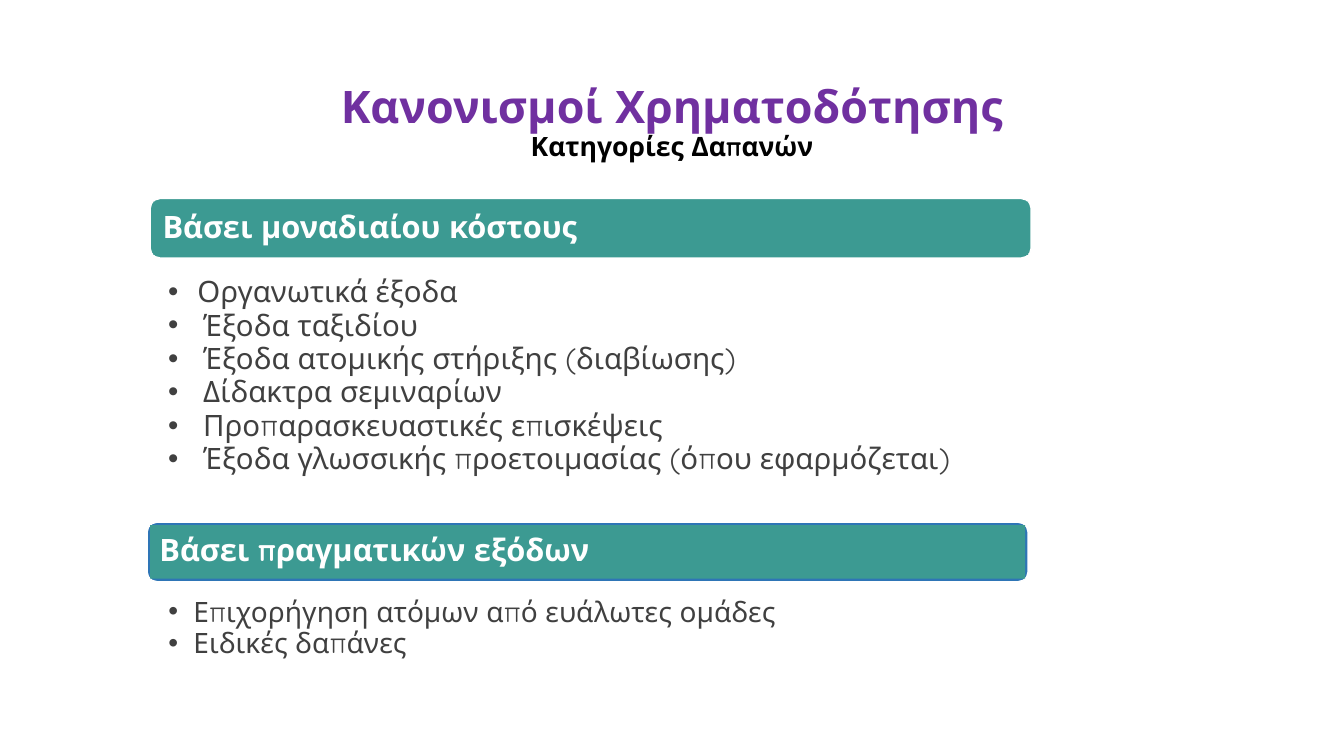
"""Builds a slide listing the expense categories of the funding rules."""
import pptx
import pptx.dml.color
import pptx.enum.shapes
import pptx.enum.text
import pptx.oxml
import pptx.oxml.ns
import pptx.util

Pt = pptx.util.Pt
RGBColor = pptx.dml.color.RGBColor
Shapes = pptx.enum.shapes.MSO_SHAPE
Align = pptx.enum.text.PP_ALIGN
Anchor = pptx.enum.text.MSO_ANCHOR

PURPLE = RGBColor(0x70, 0x30, 0xA0)
BLACK = RGBColor(0, 0, 0)
WHITE = RGBColor(0xFF, 0xFF, 0xFF)
TEAL = RGBColor(0x3C, 0x9A, 0x92)
BLUE = RGBColor(0x2E, 0x75, 0xB6)
GREY = RGBColor(0x40, 0x40, 0x40)

TITLE_LINES = [("Κανονισμοί Χρηματοδότησης", 32, PURPLE), ("Κατηγορίες Δαπανών", 19, BLACK)]
UNIT_COSTS = [
    "Οργανωτικά έξοδα",
    "Έξοδα ταξιδίου",
    "Έξοδα ατομικής στήριξης (διαβίωσης)",
    "Δίδακτρα σεμιναρίων",
    "Προπαρασκευαστικές επισκέψεις",
    "Έξοδα γλωσσικής προετοιμασίας (όπου εφαρμόζεται)",
]
REAL_COSTS = ["Επιχορήγηση ατόμων από ευάλωτες ομάδες", "Ειδικές δαπάνες"]


class SlideBuilder:
    """Holds the style and the current slide."""

    font_name = "Quicksand"
    bar_size = (629.3, 42.5)
    bar_inset = 2.2

    def __init__(self, presentation):
        self.slide = presentation.slides.add_slide(presentation.slide_layouts[5])

    def apply(self, target, values):
        for name, value in values.items():
            setattr(target, name, value)

    def frame(self, shape, margins, anchor):
        left, top, right, bottom = (Pt(margin) for margin in margins)
        self.apply(shape.text_frame, {
            "auto_size": pptx.enum.text.MSO_AUTO_SIZE.NONE, "word_wrap": True,
            "vertical_anchor": anchor, "margin_left": left, "margin_top": top,
            "margin_right": right, "margin_bottom": bottom})
        return shape.text_frame

    def add_text(self, paragraph, text, size, color, bold=False, align=Align.LEFT, after=0):
        self.apply(paragraph, {"alignment": align, "line_spacing": 0.9, "space_after": Pt(after)})
        run = paragraph.add_run()
        run.text = text
        self.apply(run.font, {"name": self.font_name, "size": Pt(size), "bold": bold})
        run.font.color.rgb = color

    def paragraphs(self, frame, items):
        for index, item in enumerate(items):
            yield (frame.add_paragraph() if index else frame.paragraphs[0]), item

    def title(self, left, top, width, height, lines):
        shape = self.slide.shapes.title
        self.apply(shape, {"left": Pt(left), "top": Pt(top), "width": Pt(width), "height": Pt(height)})
        frame = self.frame(shape, (7.2, 3.6, 7.2, 3.6), Anchor.MIDDLE)
        for paragraph, (text, size, color) in self.paragraphs(frame, lines):
            self.add_text(paragraph, text, size, color, True, Align.CENTER)

    def box(self, group, kind, left, top, width, height, fill):
        shape = group.shapes.add_shape(kind, Pt(left), Pt(top), Pt(width), Pt(height))
        shape.shadow.inherit = False
        shape.fill.solid()
        shape.fill.fore_color.rgb = fill
        return shape

    def heading_bar(self, left, top, text, edge):
        width, height = self.bar_size
        inset = self.bar_inset
        group = self.slide.shapes.add_group_shape()
        back = self.box(group, Shapes.ROUNDED_RECTANGLE, left, top, width, height, edge)
        back.adjustments[0] = 0.1667
        back.line.color.rgb = WHITE
        back.line.width = Pt(1)
        label = self.box(group, Shapes.RECTANGLE, left + inset, top + inset,
                         width - 2 * inset, height - 2 * inset, TEAL)
        label.line.fill.background()
        frame = self.frame(label, (6.6,) * 4, Anchor.MIDDLE)
        self.add_text(frame.paragraphs[0], text, 22, WHITE, True)

    def bullet(self, paragraph, indent):
        properties = paragraph._p.get_or_add_pPr()
        properties.set("marL", str(Pt(indent)))
        properties.set("indent", str(-Pt(indent)))
        namespace = pptx.oxml.ns.nsdecls("a")
        for element in ('buFont {} typeface="Arial"', 'buChar {} char="•"'):
            properties.append(pptx.oxml.parse_xml(f"<a:{element.format(namespace)}/>"))

    def bullet_list(self, left, top, width, height, items, size, indents, margin):
        shape = self.slide.shapes.add_textbox(Pt(left), Pt(top), Pt(width), Pt(height))
        frame = self.frame(shape, (21.6, margin, 12, margin), Anchor.TOP)
        for paragraph, (text, indent) in self.paragraphs(frame, zip(items, indents)):
            self.bullet(paragraph, indent)
            self.add_text(paragraph, text, size, GREY, after=1.2)


def main():
    presentation = pptx.Presentation()
    presentation.slide_width = Pt(960)
    presentation.slide_height = Pt(540)
    builder = SlideBuilder(presentation)
    builder.title(120, 50.4, 720, 75.6, TITLE_LINES)
    builder.heading_bar(107.3, 141.8, "Βάσει μοναδιαίου κόστους", TEAL)
    builder.bullet_list(98.6, 195.1, 652.3, 162, UNIT_COSTS, 21, [20.9] + [25] * 5, 2.9)
    builder.heading_bar(105.1, 373, "Βάσει πραγματικών εξόδων", BLUE)
    builder.bullet_list(98.6, 424.8, 668.9, 54, REAL_COSTS, 20, [18] * 2, 2.2)
    presentation.save("out.pptx")


if __name__ == "__main__":
    main()
